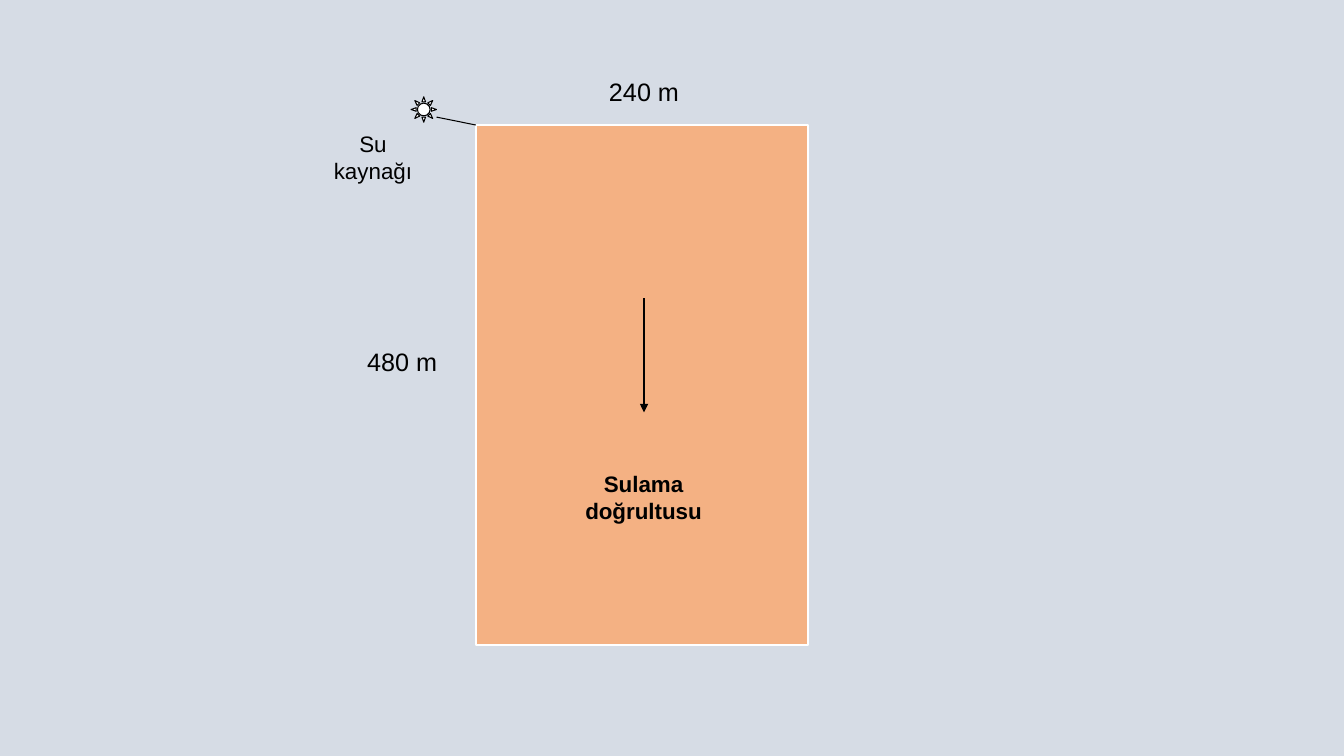
import pptx
import pptx.dml.color
import pptx.enum.shapes
import pptx.enum.text
import pptx.oxml
import pptx.oxml.ns
import pptx.util

Cm = pptx.util.Cm
Pt = pptx.util.Pt
SHAPE = pptx.enum.shapes.MSO_SHAPE


def rgb(value):
    return pptx.dml.color.RGBColor.from_string(value)


class Diagram:
    font = "Arial"
    ink = "000000"
    paper = "FFFFFF"

    def __init__(self, prs, background):
        self.s = prs.slides.add_slide(prs.slide_layouts[6])
        fill = self.s.background.fill
        fill.solid()
        fill.fore_color.rgb = rgb(background)

    def shape(self, kind, x, y, w, h, fill, line, width):
        sp = self.s.shapes.add_shape(kind, Cm(x), Cm(y), Cm(w), Cm(h))
        sp.shadow.inherit = False
        sp.fill.solid()
        sp.fill.fore_color.rgb = rgb(fill)
        sp.line.color.rgb = rgb(line)
        sp.line.width = Pt(width)
        return sp

    def line(self, x1, y1, x2, y2, width, arrow=False):
        cn = self.s.shapes.add_connector(
            pptx.enum.shapes.MSO_CONNECTOR.STRAIGHT, Cm(x1), Cm(y1), Cm(x2), Cm(y2))
        cn.line.color.rgb = rgb(self.ink)
        cn.line.width = Pt(width)
        if arrow:
            tail = pptx.oxml.parse_xml(
                f'<a:tailEnd {pptx.oxml.ns.nsdecls("a")} type="triangle"/>')
            cn.line._get_or_add_ln().append(tail)
        cn._element.spPr.append(
            pptx.oxml.parse_xml(f'<a:effectLst {pptx.oxml.ns.nsdecls("a")}/>'))

    def text(self, text, x, y, w, h, size, bold=False):
        tf = self.s.shapes.add_textbox(Cm(x), Cm(y), Cm(w), Cm(h)).text_frame
        tf.word_wrap = True
        tf.text = text
        p = tf.paragraphs[0]
        p.alignment = pptx.enum.text.PP_ALIGN.CENTER
        r = p.runs[0]
        r.font.name = self.font
        r.font.size = Pt(size)
        r.font.bold = bold
        r.font.color.rgb = rgb(self.ink)


def main():
    prs = pptx.Presentation()
    prs.slide_width, prs.slide_height = Cm(33.87), Cm(19.05)
    d = Diagram(prs, "D6DCE5")

    # Field with its irrigation direction
    left, top, width, height = 11.99, 3.15, 8.38, 13.11
    middle = left + width / 2 + 0.05
    d.shape(SHAPE.RECTANGLE, left, top, width, height, "F4B183", d.paper, 1.5)
    d.line(middle, 7.52, middle, 10.39, 2, arrow=True)
    d.text("Sulama doğrultusu", 14.33, 11.73, 3.78, 1.57, 16, bold=True)

    # Water source at the corner of the field
    d.line(left, top, 11, 2.95, 0.75)
    d.shape(SHAPE.SUN, 10.36, 2.44, 0.64, 0.64, d.paper, d.ink, 0.75)
    d.text("Su kaynağı", 8.13, top, 2.54, 0.97, 16)

    # Dimensions
    d.text("240 m", 14.96, 1.8, 2.54, 0.97, 18)
    d.text("480 m", 8.94, 8.59, 2.39, 2.24, 18)

    prs.save("out.pptx")


if __name__ == "__main__":
    main()
